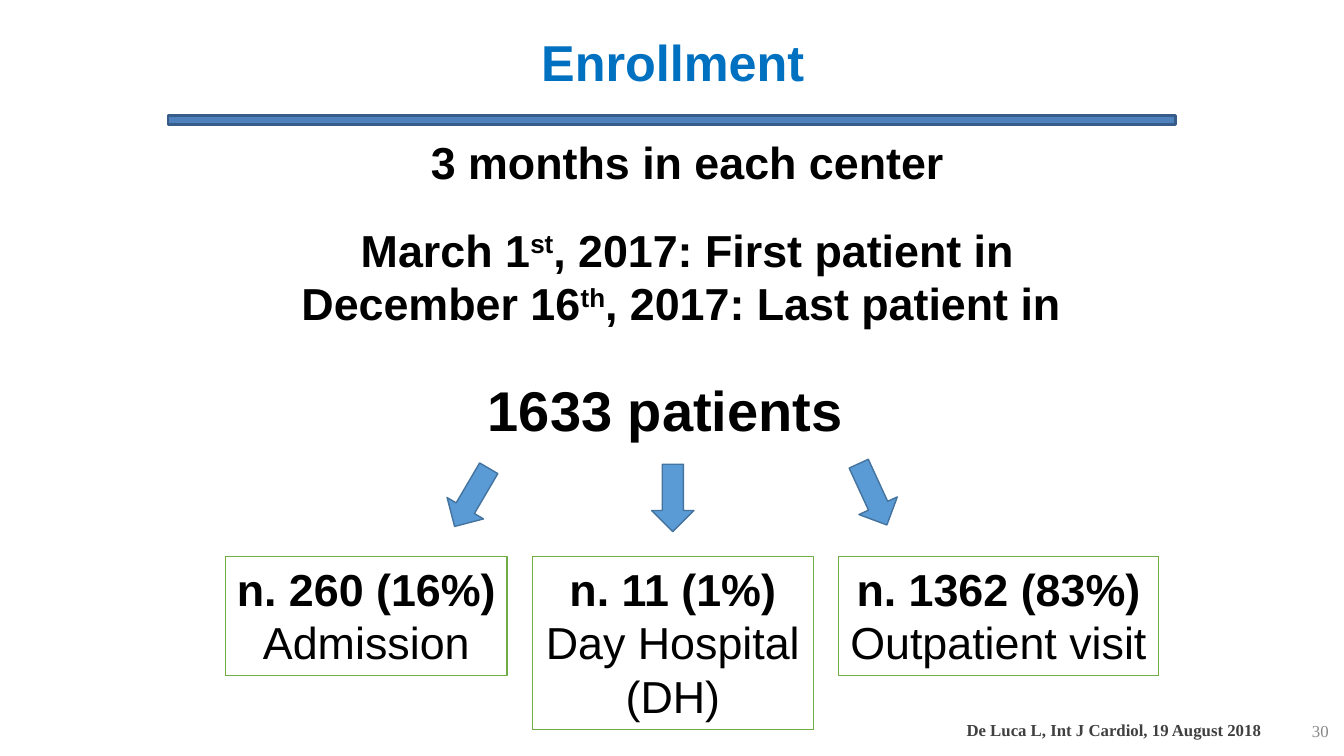
from dataclasses import dataclass

from pptx import Presentation
from pptx.dml.color import RGBColor
from pptx.enum.shapes import MSO_SHAPE as Preset
from pptx.enum.text import MSO_ANCHOR as Anchor, MSO_AUTO_SIZE as AutoSize, PP_ALIGN as Align
from pptx.util import Pt

COLORS = {
    "title": "0070C0", "text": "000000", "citation": "404040", "number": "898989",
    "rule": "4F81BD", "rule_edge": "385D8A", "arrow": "5B9BD5", "arrow_edge": "43739E",
    "group_edge": "70AD47", "white": "FFFFFF",
}


@dataclass(frozen=True)
class Line:
    text: str
    size: float = 32
    bold: bool = True
    color: str = "text"
    font: str = "Arial"
    align: Align = Align.CENTER
    space_before: float = 0
    superscript: str = ""
    rest: str = ""


@dataclass(frozen=True)
class TextBox:
    left: float
    top: float
    width: float
    height: float
    lines: tuple[Line, ...]


@dataclass(frozen=True)
class Group:
    left: float
    width: float
    height: float
    count: str
    labels: tuple[str, ...]


@dataclass(frozen=True)
class Arrow:
    left: float
    top: float
    rotation: float


TEXT_BOXES = (
    TextBox(166.3, 18.7, 628.6, 49.7, (Line("Enrollment", 36, color="title"),)),
    TextBox(166.3, 236.2, 628.6, 111.6, (Line("1633 patients ", 40),)),
    TextBox(740.2, 507.6, 216, 28.8, (
        Line("30", 12, False, "number", "Times New Roman", Align.RIGHT),)),
    TextBox(128.2, -11.5, 725.8, 355, (
        Line("3 months in each center"),
        Line("March 1", space_before=24, superscript="st", rest=", 2017: First patient in"),
        Line("December 16", superscript="th", rest=", 2017: Last patient in "),
    )),
)
GROUPS = (
    Group(161.3, 200.9, 85, "n. 260 (16%)", ("Admission",)),
    Group(380.2, 200.9, 123.8, "n. 11 (1%)", ("Day Hospital", "(DH)")),
    Group(599, 228.6, 85, "n. 1362 (83%)", ("Outpatient visit",)),
)
ARROWS = (Arrow(465.5, 331.6, 0), Arrow(608.4, 329, 335.3), Arrow(321.8, 331.2, 30.4))
GROUP_TOP = 397.4


def rgb(name: str) -> RGBColor:
    return RGBColor.from_string(COLORS[name])


def write_lines(frame, lines: tuple[Line, ...]) -> None:
    for index, line in enumerate(lines):
        para = frame.add_paragraph() if index else frame.paragraphs[0]
        para.alignment = line.align
        if line.space_before:
            para.space_before = Pt(line.space_before)
        para.font.name = line.font
        para.font.size = Pt(line.size)
        para.font.bold = line.bold
        para.font.color.rgb = rgb(line.color)
        para.add_run().text = line.text
        if line.superscript:
            span = para.add_run()
            span.text = line.superscript
            span.font._element.set("baseline", "30000")
            para.add_run().text = line.rest


def add_text_box(page, item: TextBox) -> None:
    box = page.shapes.add_textbox(Pt(item.left), Pt(item.top), Pt(item.width), Pt(item.height))
    box.text_frame.word_wrap = True
    box.text_frame.vertical_anchor = Anchor.MIDDLE
    write_lines(box.text_frame, item.lines)


def add_block(page, preset: Preset, left: float, top: float, width: float, height: float,
              fill: str = "", edge: str = "", edge_width: float = 1):
    shape = page.shapes.add_shape(preset, Pt(left), Pt(top), Pt(width), Pt(height))
    shape.shadow.inherit = False
    if fill:
        shape.fill.solid()
        shape.fill.fore_color.rgb = rgb(fill)
    else:
        shape.fill.background()
    if edge:
        shape.line.color.rgb = rgb(edge)
        shape.line.width = Pt(edge_width)
    else:
        shape.line.fill.background()
    return shape


def fit_lines(shape, lines: tuple[Line, ...]) -> None:
    frame = shape.text_frame
    frame.word_wrap = False
    frame.auto_size = AutoSize.SHAPE_TO_FIT_TEXT
    frame.vertical_anchor = Anchor.TOP
    write_lines(frame, lines)


def add_group(page, group: Group) -> None:
    shape = add_block(page, Preset.RECTANGLE, group.left, GROUP_TOP, group.width, group.height,
                      edge="group_edge", edge_width=0.75)
    labels = tuple(Line(label, bold=False) for label in group.labels)
    fit_lines(shape, (Line(group.count), *labels))


def add_arrow(page, arrow: Arrow) -> None:
    shape = add_block(page, Preset.DOWN_ARROW, arrow.left, arrow.top, 30.2, 48.2,
                      "arrow", "arrow_edge")
    shape.rotation = arrow.rotation


def main() -> None:
    deck = Presentation()
    deck.slide_width, deck.slide_height = Pt(960), Pt(540)
    page = deck.slides.add_slide(deck.slide_layouts[6])
    add_block(page, Preset.RECTANGLE, 120, 82.8, 720, 6, "rule", "rule_edge", 2)
    for group in GROUPS:
        add_group(page, group)
    for arrow in ARROWS:
        add_arrow(page, arrow)
    for item in TEXT_BOXES:
        add_text_box(page, item)
    citation = add_block(page, Preset.RECTANGLE, 683.3, 510.5, 226.8, 21.6, "white")
    fit_lines(citation, (Line("De Luca L, Int J Cardiol, 19 August 2018", 12,
                              color="citation", font="Times New Roman", align=Align.LEFT),))
    deck.save("out.pptx")


if __name__ == "__main__":
    main()
